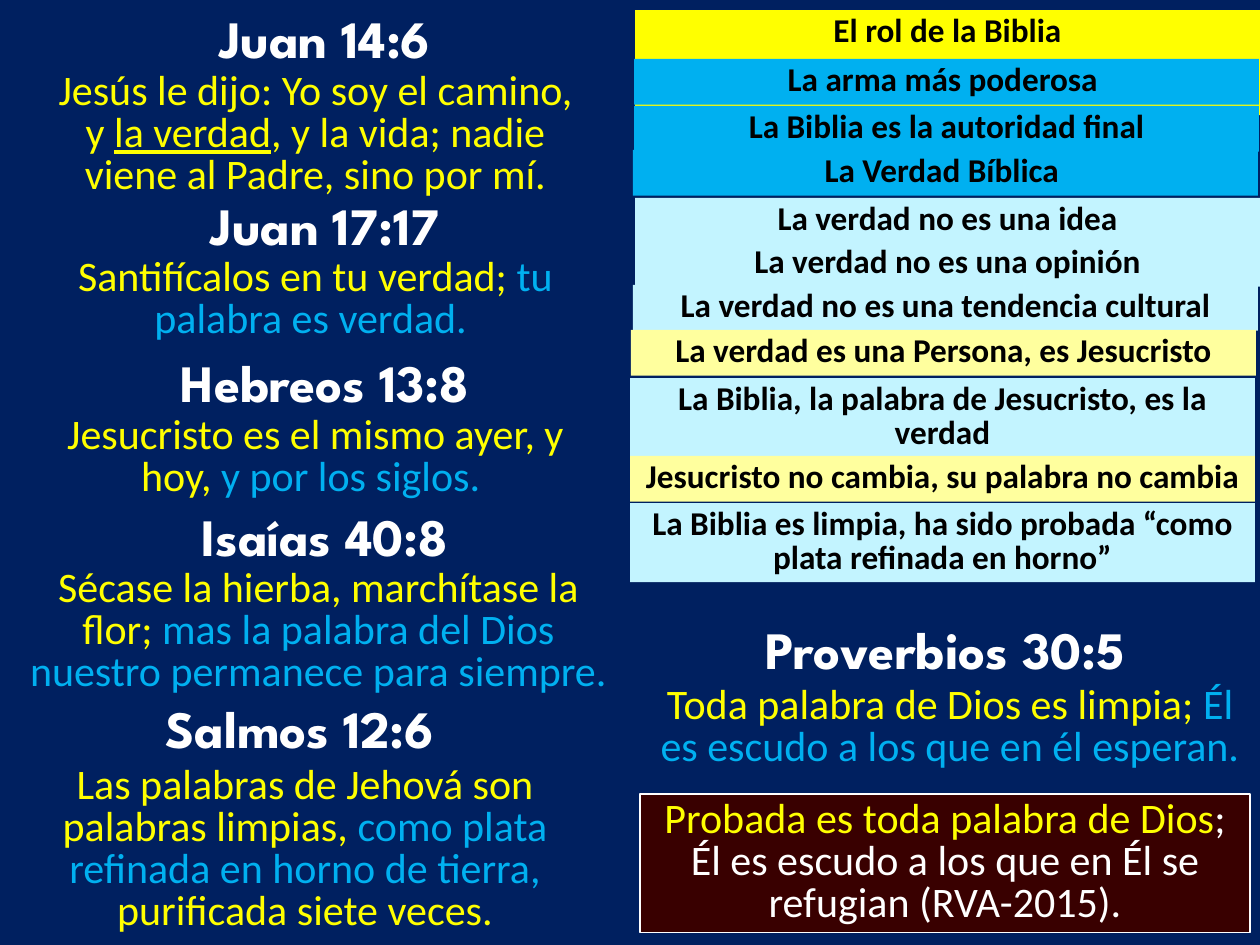
import pptx
import pptx.dml.color
import pptx.enum.shapes
import pptx.enum.text
import pptx.util

INK = {
    "navy": "002060", "white": "FFFFFF", "black": "000000",
    "yellow": "FFFF00", "blue": "00B0F0", "ice": "C3F4FF",
    "cream": "FFFF9E", "wine": "390000",
}
UNIT = 914400 / 126
BAR_W = 625
HEAD_W = 586
LINE_H = {19: 33.25, 24: 42}
PAD = 12.6

TITLE = ("El rol de la Biblia", "yellow", 635, 10, 1)
BARS = [
    ("La arma más poderosa ", "blue", 634, 59, 1),
    ("La Biblia es la autoridad final", "blue", 634, 106, 1),
    ("La Verdad Bíblica ", "blue", 633, 150, 1),
    ("La verdad no es una idea", "ice", 635, 198, 1),
    ("La verdad no es una opinión", "ice", 635, 241, 1),
    ("La verdad no es una tendencia cultural", "ice", 633, 285, 1),
    ("La verdad es una Persona, es Jesucristo", "cream", 631, 330, 1),
    ("La Biblia, la palabra de Jesucristo, es la verdad", "ice", 630, 378, 2),
    ("Jesucristo no cambia, su palabra no cambia ", "cream", 630, 456, 1),
    ("La Biblia es limpia, ha sido probada “como plata refinada en horno”",
     "ice", 630, 503, 2),
]
HEADS = [
    (" Juan 14:6", 25, 0),
    (" Juan 17:17", 25, 187),
    (" Hebreos 13:8", 25, 344),
    (" Isaías 40:8", 25, 498),
    (" Salmos 12:6", 0, 690),
    (" Proverbios 30:5", 645, 611),
]
VERSES = [
    (44, 66, 543, 3, [
        ("Jesús le dijo: Yo soy el camino, y ", "yellow"),
        ("la verdad", "yellow", True),
        (", y la vida; nadie viene al Padre, sino por mí.", "yellow")]),
    (44, 252, 543, 2, [
        ("Santifícalos en tu verdad; ", "yellow"),
        ("tu palabra es verdad. ", "blue")]),
    (44, 410, 543, 2, [
        ("Jesucristo es el mismo ayer, y hoy, ", "yellow"),
        ("y por los siglos. ", "blue")]),
    (15, 563, 607, 3, [
        ("Sécase la hierba, marchítase la flor; ", "yellow"),
        ("mas la palabra del Dios nuestro permanece para siempre.", "blue")]),
    (0, 760, 610, 4, [
        ("Las palabras de Jehová son palabras limpias, ", "yellow"),
        ("como plata refinada en horno de tierra, ", "blue"),
        ("purificada siete veces.", "yellow")]),
    (645, 680, 610, 2, [
        ("Toda palabra de Dios es limpia; ", "yellow"),
        ("Él es escudo a los que en él esperan. ", "blue")]),
]
QUOTE = (640, 794, 610, 3, [
    ("Probada es toda palabra de Dios", "yellow"),
    ("; Él es escudo a los que en Él se refugian (RVA-2015).", "white")])


def px(n):
    return pptx.util.Emu(round(n * UNIT))


def tint(name):
    return pptx.dml.color.RGBColor.from_string(INK[name])


def paint(shape, name):
    shape.fill.solid()
    shape.fill.fore_color.rgb = tint(name)


def write(shape, runs, size, font, bold=False, lead=None):
    frame = shape.text_frame
    frame.word_wrap = True
    frame.auto_size = pptx.enum.text.MSO_AUTO_SIZE.SHAPE_TO_FIT_TEXT
    frame.vertical_anchor = pptx.enum.text.MSO_ANCHOR.TOP
    para = frame.paragraphs[0]
    para.alignment = pptx.enum.text.PP_ALIGN.CENTER
    if lead:
        para.line_spacing = pptx.util.Pt(lead)
    for words, color, *under in runs:
        run = para.add_run()
        run.text = words
        run.font.name = font
        run.font.size = pptx.util.Pt(size)
        run.font.bold = bold
        run.font.color.rgb = tint(color)
        if under:
            run.font.underline = True


def box(slide, x, y, w, h):
    return slide.shapes.add_textbox(px(x), px(y), px(w), px(h))


def rect(slide, x, y, w, h, fill):
    shape = slide.shapes.add_shape(
        pptx.enum.shapes.MSO_SHAPE.RECTANGLE, px(x), px(y), px(w), px(h))
    shape.shadow.inherit = False
    shape.line.fill.background()
    paint(shape, fill)
    return shape


def high(size, lines):
    return LINE_H[size] * lines + PAD


def main():
    deck = pptx.Presentation()
    deck.slide_width, deck.slide_height = px(1260), px(945)
    slide = deck.slides.add_slide(deck.slide_layouts[5])
    paint(slide.background, "navy")

    words, fill, x, y, lines = TITLE
    title = slide.shapes.title
    title.left, title.top = px(x), px(y)
    title.width, title.height = px(BAR_W), px(high(19, lines))
    paint(title, fill)
    write(title, [(words, "black")], 19, "Calibri", True, 19)

    for words, fill, x, y, lines in BARS:
        bar = rect(slide, x, y, BAR_W, high(19, lines), fill)
        write(bar, [(words, "black")], 19, "Calibri", True, 19)

    for words, x, y in HEADS:
        head = box(slide, x, y, HEAD_W, 77)
        write(head, [(words, "white")], 30, "League Spartan", True)

    for x, y, w, lines, runs in VERSES:
        verse = box(slide, x, y, w, high(24, lines))
        write(verse, runs, 24, "Calibri", lead=24)

    x, y, w, lines, runs = QUOTE
    quote = rect(slide, x, y, w, high(24, lines), "wine")
    quote.line.color.rgb = tint("white")
    quote.line.width = pptx.util.Pt(0.75)
    write(quote, runs, 24, "Calibri", lead=24)

    deck.save("out.pptx")


if __name__ == "__main__":
    main()
